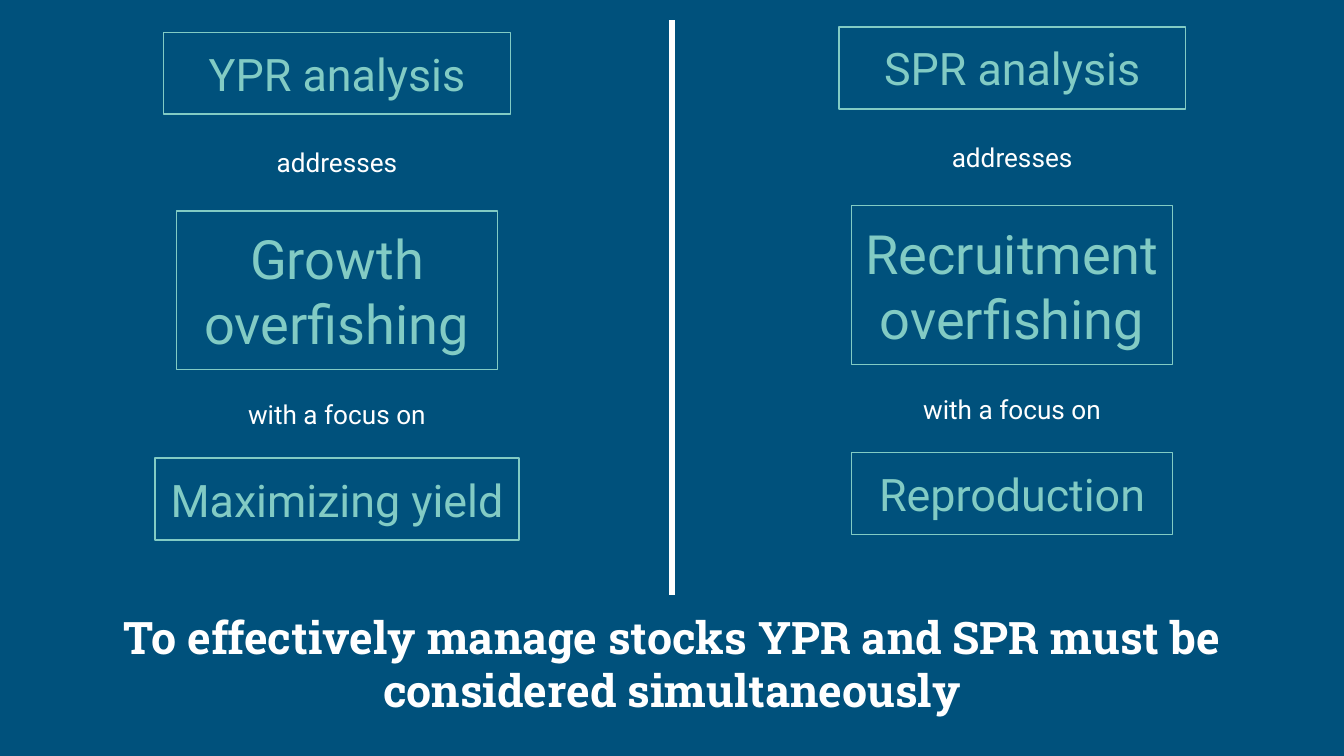
import pptx
import pptx.dml.color
import pptx.enum.shapes
import pptx.enum.text
import pptx.util
from lxml import etree
from pptx.util import Cm

NAVY = pptx.dml.color.RGBColor(0x00, 0x51, 0x7C)
MINT = pptx.dml.color.RGBColor(0x82, 0xCB, 0xC4)
WHITE = pptx.dml.color.RGBColor(0xFF, 0xFF, 0xFF)

SLIDE_WIDTH, SLIDE_HEIGHT = 25.4, 14.29
CONCLUSION = "To effectively manage stocks YPR and SPR must be considered simultaneously"

# Each column: centre, top, then (text, width) from top to bottom.
COLUMNS = [
    (6.37, 0.61, [("YPR analysis", 6.55), ("addresses", 4.88),
                  ("Growth overfishing", 6.07), ("with a focus on", 4.55),
                  ("Maximizing yield", 6.88)]),
    (19.13, 0.51, [("SPR analysis", 6.55), ("addresses", 5.74),
                   ("Recruitment overfishing", 6.07), ("with a focus on", 4.55),
                   ("Reproduction", 6.07)]),
]
# Each row: offset from the column top, height, text size, boxed.
ROWS = [
    (0, 1.55, 24, True),
    (1.9, 1.12, 14, False),
    (3.38, 3, 29, True),
    (6.66, 1.12, 14, False),
    (8.05, 1.55, 24, True),
]


def write_text(shape, text, size, color, font="Roboto", bold=False):
    frame = shape.text_frame
    frame.word_wrap = True
    frame.auto_size = pptx.enum.text.MSO_AUTO_SIZE.NONE
    frame.vertical_anchor = pptx.enum.text.MSO_ANCHOR.MIDDLE
    frame.margin_left = frame.margin_right = Cm(0.25)
    frame.margin_top = frame.margin_bottom = Cm(0.25)
    paragraph = frame.paragraphs[0]
    paragraph.alignment = pptx.enum.text.PP_ALIGN.CENTER
    run = paragraph.add_run()
    run.text = text
    run.font.name = font
    run.font.size = pptx.util.Pt(size)
    run.font.bold = bold
    run.font.color.rgb = color


def add_column(slide, center, top, entries):
    for (text, width), (offset, height, size, boxed) in zip(entries, ROWS):
        place = Cm(center - width / 2), Cm(top + offset), Cm(width), Cm(height)
        if boxed:
            shape = slide.shapes.add_shape(
                pptx.enum.shapes.MSO_SHAPE.RECTANGLE, *place)
            shape.shadow.inherit = False
            shape.fill.background()
            shape.line.color.rgb = MINT
            shape.line.width = pptx.util.Pt(0.75)
        else:
            shape = slide.shapes.add_textbox(*place)
        write_text(shape, text, size, MINT if boxed else WHITE)


def add_divider(slide):
    middle = Cm(SLIDE_WIDTH / 2)
    divider = slide.shapes.add_connector(
        pptx.enum.shapes.MSO_CONNECTOR.STRAIGHT, middle, Cm(0.38), middle, Cm(11.25))
    divider.line.color.rgb = WHITE
    divider.line.width = pptx.util.Pt(3)
    properties = divider.line._get_or_add_ln().getparent()
    etree.SubElement(properties, pptx.oxml.ns.qn("a:effectLst"))


def main():
    presentation = pptx.Presentation()
    presentation.slide_width = Cm(SLIDE_WIDTH)
    presentation.slide_height = Cm(SLIDE_HEIGHT)
    slide = presentation.slides.add_slide(presentation.slide_layouts[5])
    slide.background.fill.solid()
    slide.background.fill.fore_color.rgb = NAVY

    for center, top, entries in COLUMNS:
        add_column(slide, center, top, entries)
    add_divider(slide)

    title = slide.shapes.title
    title.left, title.top = Cm(0), Cm(11.25)
    title.width, title.height = Cm(SLIDE_WIDTH), Cm(2.57)
    write_text(title, CONCLUSION, 24, WHITE, font="Roboto Slab", bold=True)

    presentation.save("out.pptx")


if __name__ == "__main__":
    main()
